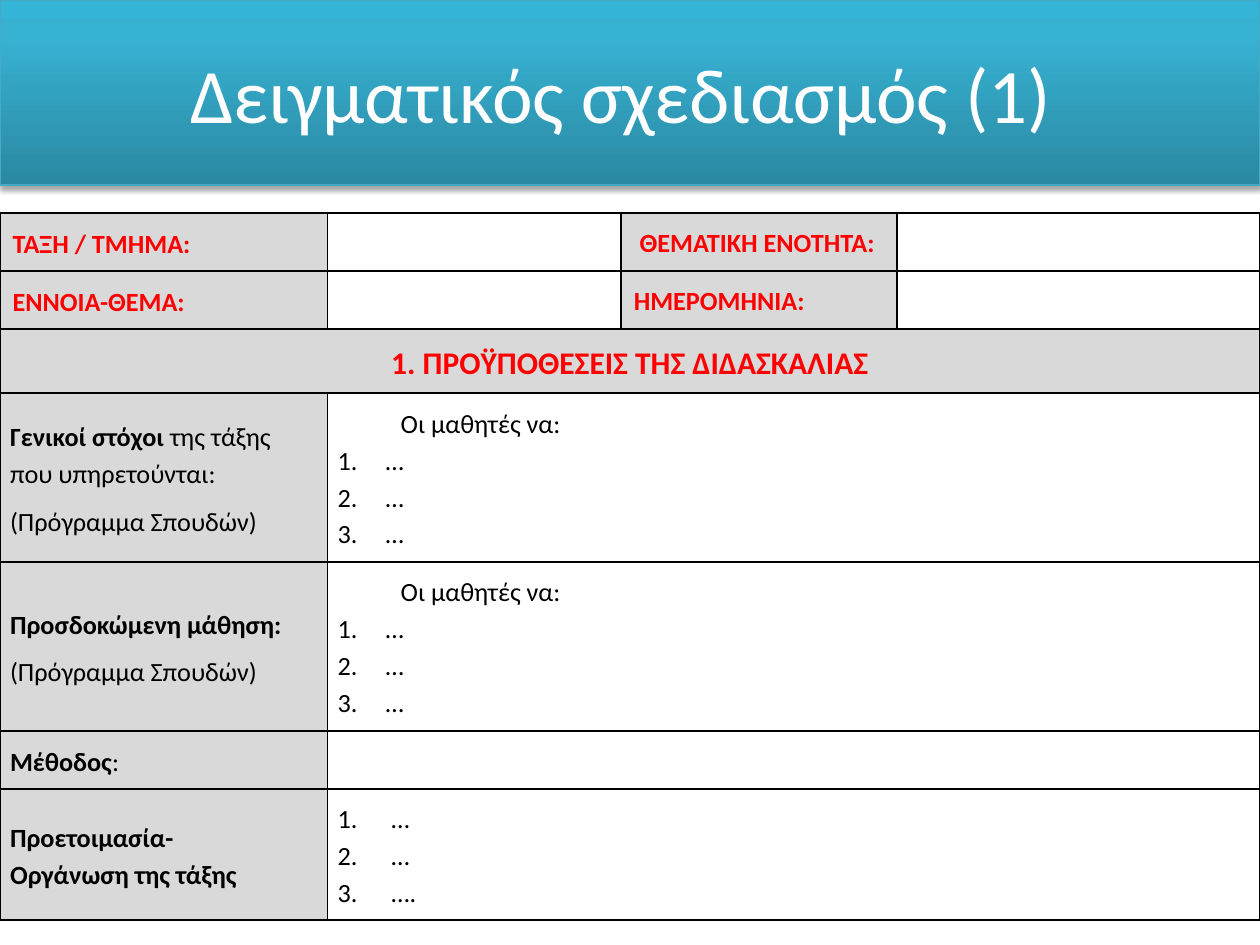
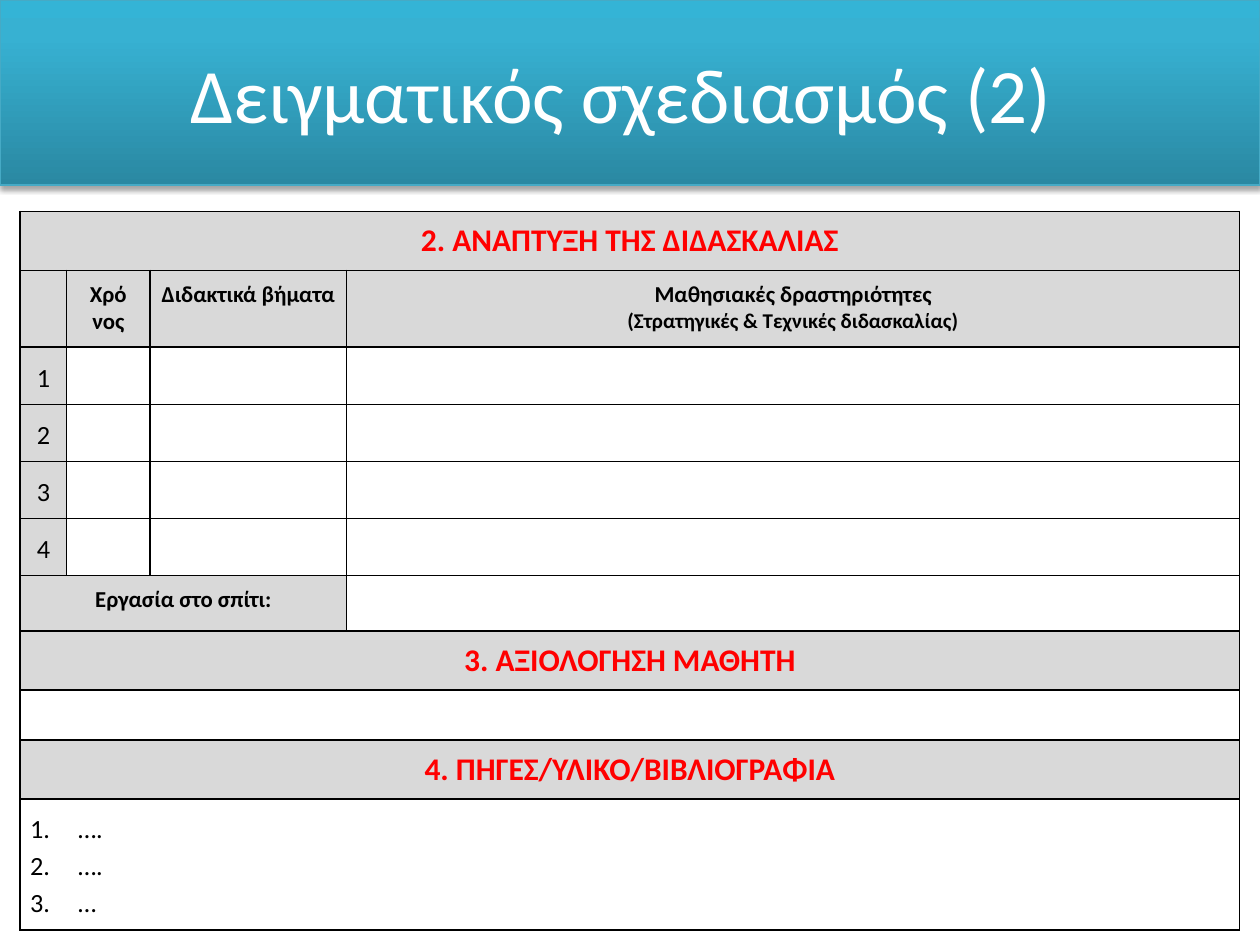
from dataclasses import dataclass
from functools import partial

from lxml import etree
from pptx import Presentation
from pptx.dml.color import RGBColor
from pptx.enum.shapes import MSO_SHAPE as Shape
from pptx.enum.text import MSO_ANCHOR as Anchor, PP_ALIGN as Align
from pptx.oxml import parse_xml
from pptx.oxml.ns import qn
from pptx.util import Inches, Pt

BLACK = RGBColor(0x00, 0x00, 0x00)
WHITE = RGBColor(0xFF, 0xFF, 0xFF)
RED = RGBColor(0xFF, 0x00, 0x00)
GREY = RGBColor(0xD9, 0xD9, 0xD9)
BAND_EDGE = RGBColor(0x46, 0xAA, 0xC5)
BAND_STOPS = [
    (0, RGBColor(0x2A, 0x88, 0xA2)),
    (80, RGBColor(0x37, 0xB1, 0xD2)),
    (100, RGBColor(0x34, 0xB4, 0xD6)),
]
DRAWING = 'xmlns:a="http://schemas.openxmlformats.org/drawingml/2006/main"'


@dataclass
class Para:
    text: str
    lead: str = ""
    size: int = 15
    bold: bool = False
    color: RGBColor = BLACK
    align: Align = Align.LEFT
    indent: float = 0
    spacing: float = 1.15
    after: int = 0
    numbered: bool = False


@dataclass
class Cell:
    paras: list
    fill: RGBColor = GREY
    anchor: Anchor = Anchor.TOP
    span: int = 1


Field = partial(Para, bold=True, color=RED, indent=0.02)
ColumnHead = partial(Para, size=13, bold=True, align=Align.CENTER, spacing=1.0)
Side = partial(Cell, anchor=Anchor.MIDDLE)


def section(text, spacing=1.0):
    return Cell([Para(text, size=18, bold=True, color=RED, align=Align.CENTER, spacing=spacing)], span=4)


def answers(items, span, intro=None):
    opening = [Para(intro, indent=0.5)] if intro else []
    return Cell(opening + [Para(item, numbered=True) for item in items], fill=WHITE, span=span)


def blank(span=1, fill=WHITE):
    return Cell([], fill=fill, span=span)


class Deck:
    font = "Calibri"
    padding = Inches(0.08)
    empty_padding = Inches(0.04)

    def __init__(self):
        self.prs = Presentation()
        self.prs.slide_width = Inches(10)
        self.prs.slide_height = Inches(7.5)
        self.slide = None

    def add_slide(self, title):
        self.slide = self.prs.slides.add_slide(self.prs.slide_layouts[6])
        self.title_band(title)

    def title_band(self, title):
        band = self.slide.shapes.add_shape(Shape.RECTANGLE, 0, 0, self.prs.slide_width, Inches(1.47))
        band.line.color.rgb = BAND_EDGE
        band.line.width = Pt(0.75)
        stops = "".join(
            f'<a:gs pos="{place * 1000}"><a:srgbClr val="{color}"/></a:gs>' for place, color in BAND_STOPS
        )
        gradient = parse_xml(
            f'<a:gradFill {DRAWING} rotWithShape="1"><a:gsLst>{stops}</a:gsLst>'
            '<a:lin ang="16200000" scaled="0"/></a:gradFill>'
        )
        shadow = parse_xml(
            f'<a:effectLst {DRAWING}><a:outerShdw blurRad="{Pt(3.1)}" dist="{Pt(1.8)}" dir="5400000" '
            'rotWithShape="0"><a:srgbClr val="000000"><a:alpha val="35000"/></a:srgbClr>'
            "</a:outerShdw></a:effectLst>"
        )
        properties = band._element.spPr
        properties.find(qn("a:prstGeom")).addnext(gradient)
        properties.append(shadow)
        frame = band.text_frame
        frame.word_wrap = True
        frame.vertical_anchor = Anchor.MIDDLE
        self.set_para(frame.paragraphs[0], Para(title, size=44, color=WHITE, align=Align.CENTER, spacing=1.0))

    def set_para(self, paragraph, para):
        paragraph.alignment = para.align
        paragraph.line_spacing = para.spacing
        paragraph.space_after = Pt(para.after)
        paragraph.font.name = self.font
        paragraph.font.size = Pt(para.size)
        paragraph.font.color.rgb = para.color
        if para.lead:
            paragraph.add_run().text = para.lead
            paragraph.add_run().text = para.text
            for run, bold in zip(paragraph.runs, (True, False)):
                run.font.bold = bold
        else:
            paragraph.add_run().text = para.text
            paragraph.font.bold = para.bold
        properties = paragraph._p.get_or_add_pPr()
        if para.numbered:
            properties.set("marL", str(Inches(0.38)))
            properties.set("indent", str(-Inches(0.38)))
            number = etree.Element(qn("a:buAutoNum"), type="arabicPeriod")
            properties.find(qn("a:defRPr")).addprevious(number)
        elif para.indent:
            properties.set("marL", str(Inches(para.indent)))

    def style_cell(self, cell, fill):
        properties = cell._tc.get_or_add_tcPr()
        for side in "LRTB":
            properties.append(parse_xml(
                f'<a:ln{side} {DRAWING} w="{Pt(1)}"><a:solidFill><a:srgbClr val="{BLACK}"/>'
                f"</a:solidFill></a:ln{side}>"
            ))
        cell.fill.solid()
        cell.fill.fore_color.rgb = fill

    def fill_cell(self, cell, content):
        padding = self.padding if content.paras else self.empty_padding
        cell.margin_left = cell.margin_right = cell.margin_top = cell.margin_bottom = padding
        cell.vertical_anchor = content.anchor
        frame = cell.text_frame
        for index, para in enumerate(content.paras):
            self.set_para(frame.add_paragraph() if index else frame.paragraphs[0], para)

    def table(self, left, top, widths, heights, rows):
        frame = self.slide.shapes.add_table(
            len(heights), len(widths), Inches(left), Inches(top), Inches(sum(widths)), Inches(sum(heights))
        )
        table = frame.table
        table.first_row = table.horz_banding = False
        for column, width in zip(table.columns, widths):
            column.width = Inches(width)
        for row, height in zip(table.rows, heights):
            row.height = Inches(height)
        for row_index, contents in enumerate(rows):
            start = 0
            for content in contents:
                end = start + content.span
                for column_index in range(start, end):
                    self.style_cell(table.cell(row_index, column_index), content.fill)
                cell = table.cell(row_index, start)
                if content.span > 1:
                    cell.merge(table.cell(row_index, end - 1))
                self.fill_cell(cell, content)
                start = end


def preconditions_slide(deck):
    deck.add_slide("Δειγματικός σχεδιασμός (1) ")
    goals = answers(["…"] * 3, 3, intro="Οι μαθητές να:")
    programme = Para("(Πρόγραμμα Σπουδών)")
    rows = [
        [Side([Field("ΤΑΞΗ / ΤΜΗΜΑ:")]), blank(), Cell([Field(" ΘΕΜΑΤΙΚΗ ΕΝΟΤΗΤΑ:")]), blank()],
        [Side([Field("ΕΝΝΟΙΑ-ΘΕΜΑ:")]), blank(), Cell([Field("ΗΜΕΡΟΜΗΝΙΑ:")]), blank()],
        [section("1. ΠΡΟŸΠΟΘΕΣΕΙΣ ΤΗΣ ΔΙΔΑΣΚΑΛΙΑΣ", spacing=1.15)],
        [Side([Para("της τάξης που υπηρετούνται:", lead="Γενικοί στόχοι ", after=6), programme]), goals],
        [Side([Para("Προσδοκώμενη μάθηση:", bold=True, after=6), programme]), goals],
        [Side([Para(":", lead="Μέθοδος")]), blank(3)],
        [
            Side([Para(line, bold=True) for line in ("Προετοιμασία-", "Οργάνωση της τάξης")]),
            answers([" …", " …", " …."], 3),
        ],
    ]
    deck.table(0, 1.69, [2.6, 2.33, 2.19, 2.88], [0.46, 0.46, 0.51, 1.34, 1.34, 0.46, 1.04], rows)


def development_slide(deck):
    deck.add_slide("Δειγματικός σχεδιασμός (2) ")
    steps = [
        [Cell([Para(str(step), align=Align.CENTER)]), blank(), blank(), blank()] for step in range(1, 5)
    ]
    rows = [
        [section("2. ΑΝΑΠΤΥΞΗ ΤΗΣ ΔΙΔΑΣΚΑΛΙΑΣ")],
        [
            blank(fill=GREY),
            Cell([ColumnHead("Χρό"), ColumnHead("νος")]),
            Cell([ColumnHead("Διδακτικά βήματα")]),
            Cell([
                ColumnHead("Μαθησιακές δραστηριότητες"),
                ColumnHead("(Στρατηγικές & Τεχνικές διδασκαλίας)", size=12),
            ]),
        ],
        *steps,
        [Cell([ColumnHead("Εργασία στο σπίτι:")], span=3), blank()],
        [section("3. ΑΞΙΟΛΟΓΗΣΗ ΜΑΘΗΤΗ")],
        [blank(4)],
        [section("4. ΠΗΓΕΣ/ΥΛΙΚΟ/ΒΙΒΛΙΟΓΡΑΦΙΑ")],
        [answers(["….", "….", "…"], 4)],
    ]
    heights = [0.46, 0.61] + [0.45] * 4 + [0.44, 0.46, 0.4, 0.46, 1.04]
    deck.table(0.16, 1.68, [0.37, 0.66, 1.56, 7.09], heights, rows)


def main():
    deck = Deck()
    preconditions_slide(deck)
    development_slide(deck)
    deck.prs.save("out.pptx")


if __name__ == "__main__":
    main()
